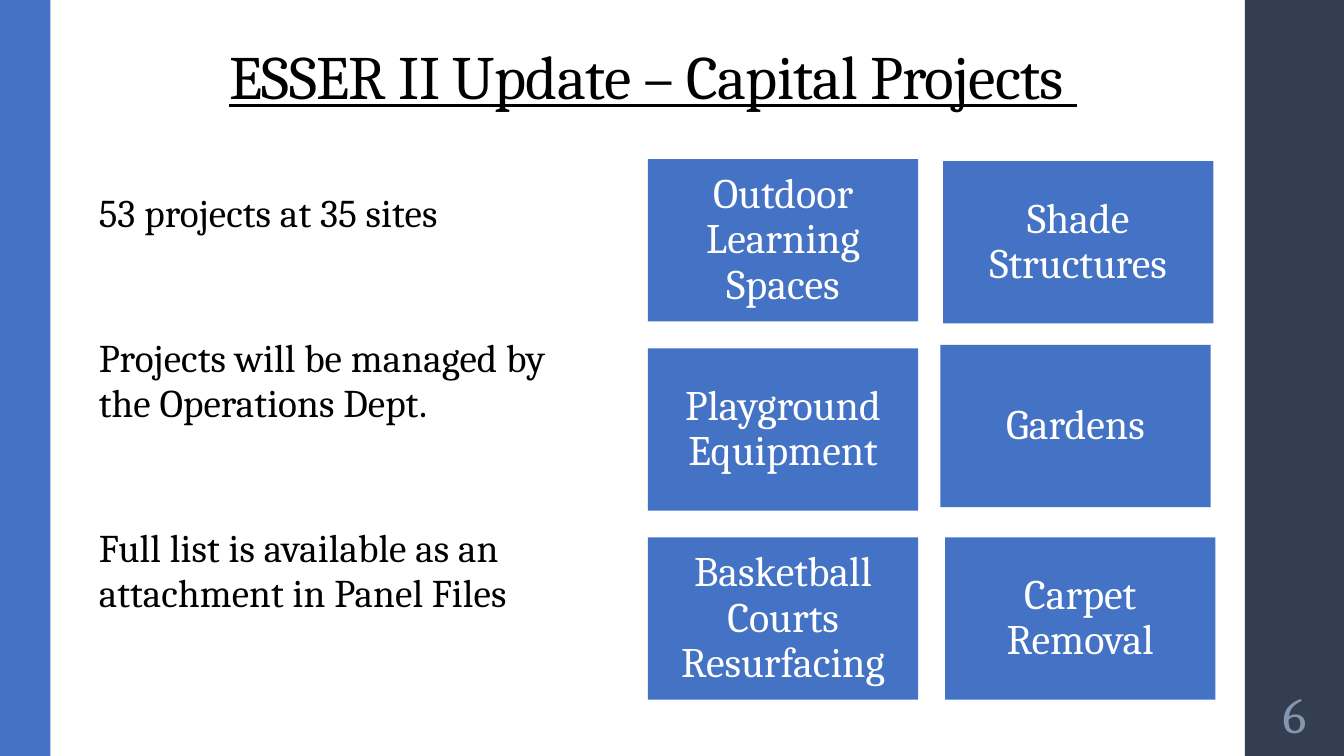
import pptx
import pptx.util
from pptx.dml.color import RGBColor
from pptx.enum.shapes import MSO_SHAPE
from pptx.enum.text import MSO_ANCHOR, PP_ALIGN
from pptx.util import Cm, Pt

# Content
TITLE = "ESSER II Update – Capital Projects "
PAGE_NUMBER = "6"
NOTES = [
    "53 projects at 35 sites",
    "Projects will be managed by the Operations Dept.",
    "Full list is available as an attachment in Panel Files",
]
# Project name, left and top in cm
PROJECTS = [
    ("Outdoor Learning Spaces", 16.33, 4.01),
    ("Shade Structures", 23.77, 4.06),
    ("Playground Equipment", 16.33, 8.78),
    ("Gardens", 23.7, 8.69),
    ("Basketball Courts Resurfacing", 16.33, 13.54),
    ("Carpet Removal", 23.82, 13.54),
]

# Style
FONT = "Cambria"
BLUE = RGBColor(0x44, 0x72, 0xC4)
NAVY = RGBColor(0x33, 0x3F, 0x50)
GREY_BLUE = RGBColor(0x84, 0x97, 0xB0)
WHITE = RGBColor(0xFF, 0xFF, 0xFF)
BLACK = RGBColor(0, 0, 0)
SLIDE_WIDTH, SLIDE_HEIGHT = 33.87, 19.05
LEFT_BAR, RIGHT_BAR = 1.27, 2.5
CARD_WIDTH, CARD_HEIGHT = 6.81, 4.09


def add_box(slide, left, top, width, height, fill):
    shape = slide.shapes.add_shape(
        MSO_SHAPE.RECTANGLE, Cm(left), Cm(top), Cm(width), Cm(height))
    shape.shadow.inherit = False
    shape.fill.solid()
    shape.fill.fore_color.rgb = fill
    shape.line.fill.background()
    return shape


def write(shape, text, size, color, align=PP_ALIGN.CENTER,
          anchor=MSO_ANCHOR.MIDDLE, line_spacing=1.0, tracking=0):
    frame = shape.text_frame
    frame.text = text
    frame.word_wrap = True
    frame.vertical_anchor = anchor
    for paragraph in frame.paragraphs:
        paragraph.alignment = align
        paragraph.line_spacing = line_spacing
        for run in paragraph.runs:
            run.font.name = FONT
            run.font.size = Pt(size)
            run.font.color.rgb = color
            if tracking:
                run._r.get_or_add_rPr().set("spc", str(tracking))
    return frame


def set_insets(frame, inset):
    frame.margin_left = frame.margin_right = Cm(inset)
    frame.margin_top = frame.margin_bottom = Cm(inset)


def main():
    presentation = pptx.Presentation()
    presentation.slide_width = Cm(SLIDE_WIDTH)
    presentation.slide_height = Cm(SLIDE_HEIGHT)
    slide = presentation.slides.add_slide(presentation.slide_layouts[6])

    # Side bars
    right_bar_left = SLIDE_WIDTH - RIGHT_BAR
    add_box(slide, right_bar_left, 0, RIGHT_BAR, SLIDE_HEIGHT, NAVY)
    add_box(slide, 0, 0, LEFT_BAR, SLIDE_HEIGHT, BLUE)

    # Title
    title = slide.shapes.add_textbox(Cm(3), Cm(0.66), Cm(26.92), Cm(2.29))
    frame = write(title, TITLE, 44, BLACK, anchor=MSO_ANCHOR.BOTTOM,
                  line_spacing=0.85, tracking=-50)
    frame.paragraphs[0].runs[0].font.underline = True

    # Page number
    number = slide.shapes.add_textbox(
        Cm(right_bar_left), Cm(17.15), Cm(RIGHT_BAR), Cm(1.65))
    set_insets(write(number, PAGE_NUMBER, 36, GREY_BLUE), 0.13)

    # Project cards
    for name, left, top in PROJECTS:
        card = add_box(slide, left, top, CARD_WIDTH, CARD_HEIGHT, BLUE)
        set_insets(write(card, name, 30, WHITE, line_spacing=0.9), 0.3)

    # Notes on the left
    notes = add_box(slide, 2.24, 4.7, 12.98, 12.45, WHITE)
    frame = write(notes, "\n".join(NOTES), 28, BLACK, PP_ALIGN.LEFT,
                  MSO_ANCHOR.TOP, line_spacing=0.95, tracking=10)
    for paragraph in frame.paragraphs[1:]:
        paragraph.space_before = Pt(72)

    presentation.save("out.pptx")


if __name__ == "__main__":
    main()
